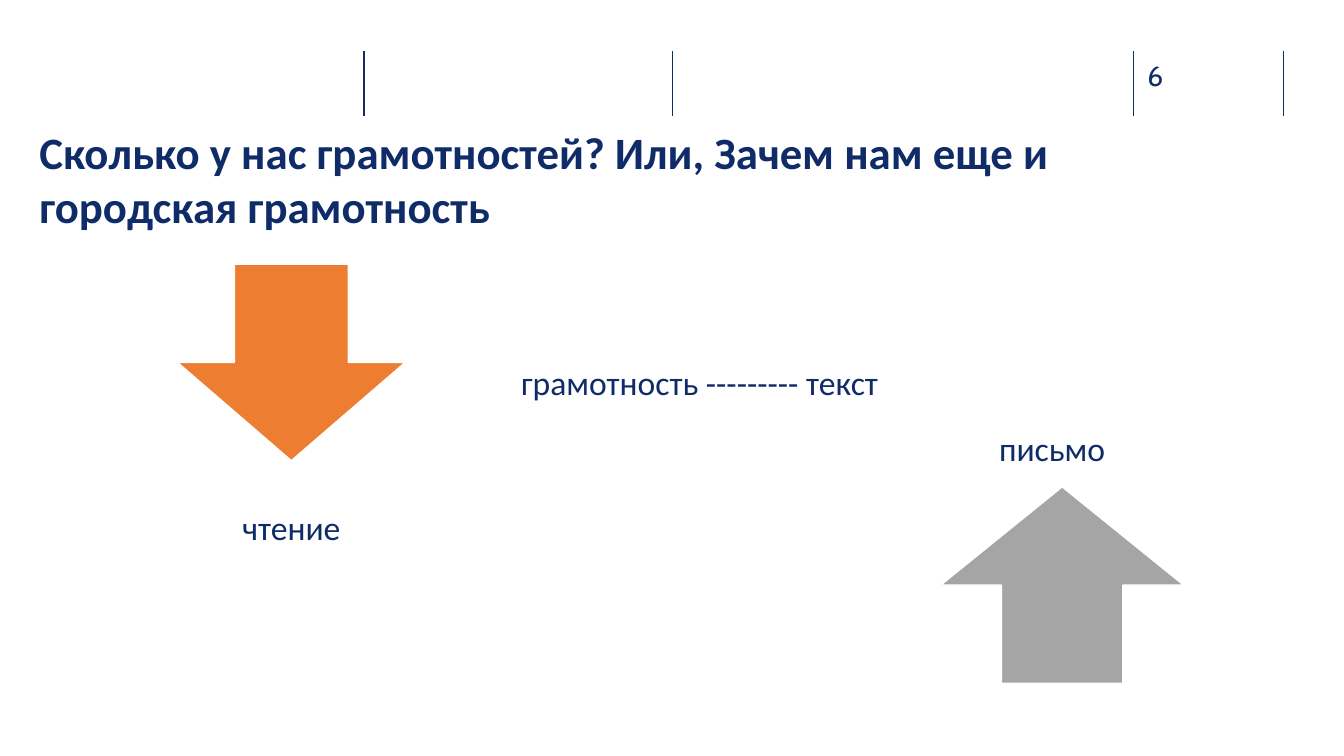
import pptx
import pptx.util
import pptx.dml.color
import pptx.enum.shapes
import pptx.enum.text
import pptx.oxml.ns
from dataclasses import dataclass
from lxml import etree

SHAPE = pptx.enum.shapes.MSO_SHAPE
ALIGN = pptx.enum.text.PP_ALIGN
ANCHOR = pptx.enum.text.MSO_ANCHOR
FIT = pptx.enum.text.MSO_AUTO_SIZE


@dataclass(frozen=True)
class Theme:
    rule: str = "102D69"
    ink: str = "0F2C68"
    down: str = "ED7D31"
    up: str = "A5A5A5"
    edge: str = "FFFFFF"
    font: str = "Calibri"
    digit: str = "Cabin"
    head: int = 32
    body: int = 24
    small: int = 20


def px(size):
    return pptx.util.Emu(size * 9144)


def rgb(code):
    return pptx.dml.color.RGBColor.from_string(code)


class Page:
    def __init__(self, deck, theme):
        self.theme = theme
        self.slide = deck.slides.add_slide(deck.slide_layouts[5])

    def fill(self, frame, text, size, color, font, bold=False,
             align=ALIGN.LEFT, anchor=ANCHOR.TOP):
        frame.word_wrap = True
        frame.auto_size = FIT.NONE
        frame.vertical_anchor = anchor
        para = frame.paragraphs[0]
        para.alignment = align
        run = para.add_run()
        run.text = text
        run.font.name = font
        run.font.size = pptx.util.Pt(size)
        run.font.bold = bold
        run.font.color.rgb = rgb(color)

    def title(self, text, left, top, width, height):
        box = self.slide.shapes.title
        box.left, box.top = px(left), px(top)
        box.width, box.height = px(width), px(height)
        self.fill(box.text_frame, text, self.theme.head, self.theme.ink,
                  self.theme.font, bold=True)

    def label(self, text, left, top, width, height, **style):
        box = self.slide.shapes.add_textbox(
            px(left), px(top), px(width), px(height))
        self.fill(box.text_frame, text, self.theme.body, self.theme.ink,
                  self.theme.font, **style)

    def number(self, text, left, top, width, height):
        box = self.slide.shapes.add_textbox(
            px(left), px(top), px(width), px(height))
        frame = box.text_frame
        frame.margin_left = frame.margin_right = 0
        frame.margin_top = frame.margin_bottom = 0
        self.fill(frame, text, self.theme.small, self.theme.rule,
                  self.theme.digit)

    def rule(self, left, top, end):
        line = self.slide.shapes.add_connector(
            pptx.enum.shapes.MSO_CONNECTOR.STRAIGHT,
            px(left), px(top), px(left), px(end))
        line.line.color.rgb = rgb(self.theme.rule)
        line.line.width = pptx.util.Pt(1)
        etree.SubElement(line._element.spPr,
                         pptx.oxml.ns.qn("a:effectLst"))

    def arrow(self, kind, color, left, top, width, height):
        shape = self.slide.shapes.add_shape(
            kind, px(left), px(top), px(width), px(height))
        shape.shadow.inherit = False
        shape.fill.solid()
        shape.fill.fore_color.rgb = rgb(color)
        shape.line.color.rgb = rgb(self.theme.edge)
        shape.line.width = pptx.util.Pt(1)


def main():
    deck = pptx.Presentation()
    deck.slide_width, deck.slide_height = px(1333), px(750)
    theme = Theme()
    page = Page(deck, theme)

    for left in (361, 667, 1124, 1273):
        page.rule(left, 51, 115)
    page.number("6", 1138, 58, 73, 34)
    page.title("Сколько у нас грамотностей? Или, Зачем нам еще и "
               "городская грамотность", 29, 119, 1219, 118)
    page.arrow(SHAPE.DOWN_ARROW, theme.down, 176, 262, 226, 195)
    page.arrow(SHAPE.UP_ARROW, theme.up, 933, 483, 241, 195)
    page.label("грамотность --------- текст", 507, 354, 384, 50)
    for text, left, top, width in (("чтение", 158, 457, 262),
                                   ("письмо", 933, 378, 221)):
        page.label(text, left, top, width, 91,
                   align=ALIGN.CENTER, anchor=ANCHOR.BOTTOM)

    deck.save("out.pptx")


if __name__ == "__main__":
    main()
